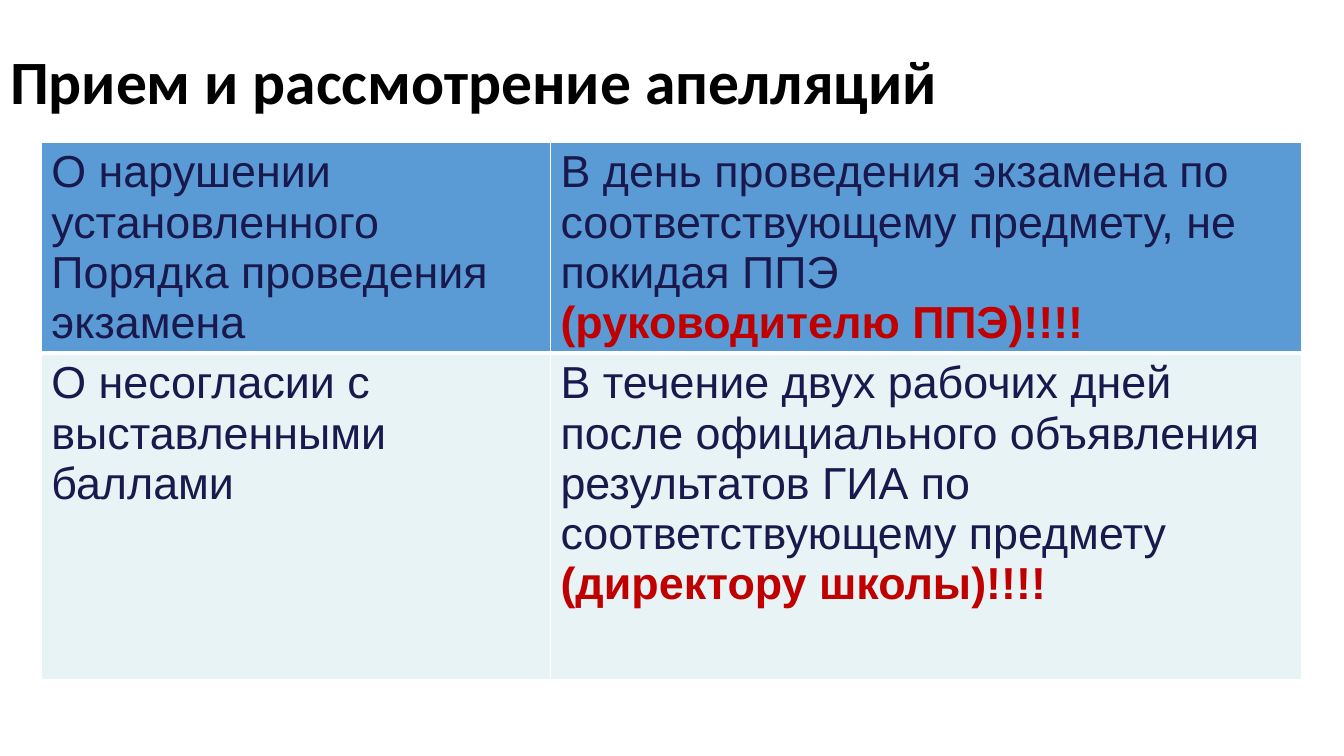
from pptx import Presentation
from pptx.dml.color import RGBColor
from pptx.enum.text import MSO_ANCHOR, PP_ALIGN
from pptx.oxml import parse_xml
from pptx.oxml.ns import nsdecls
from pptx.util import Inches, Pt

BLACK = RGBColor(0x00, 0x00, 0x00)
WHITE = RGBColor(0xFF, 0xFF, 0xFF)
NAVY = RGBColor(0x19, 0x19, 0x4D)
RED = RGBColor(0xC0, 0x00, 0x00)
BLUE = RGBColor(0x5B, 0x9B, 0xD5)
PALE = RGBColor(0xE7, 0xF3, 0xF4)

WIDTH, HEIGHT = Inches(13.33), Inches(7.5)
COLUMN_SHARES = (0.404, 0.596)
ROW_HEIGHTS = (1.76, 3.24)
ROW_FILLS = (BLUE, PALE)
THIN, THICK = 1, 3

# Each cell holds its statement and, where there is one, the addressee.
APPEALS = (
    (("О нарушении  установленного Порядка проведения экзамена",),
     ("В день проведения экзамена по соответствующему предмету, не покидая ППЭ",
      "(руководителю ППЭ)!!!!")),
    (("О несогласии с выставленными баллами",),
     ("В течение двух рабочих дней после официального объявления результатов "
      "ГИА по соответствующему предмету",
      "(директору школы)!!!!")),
)


def write(paragraph, text, size=32, font="Arial", color=NAVY, bold=False,
          line_spacing=None):
    paragraph.alignment = PP_ALIGN.LEFT
    paragraph.line_spacing = line_spacing
    run = paragraph.add_run()
    run.text = text
    run.font.size = Pt(size)
    run.font.name = font
    run.font.bold = bold
    run.font.color.rgb = color


def set_borders(cell, **widths):
    """Draw white borders; keys are lnL, lnR, lnT, lnB in schema order."""
    properties = cell._tc.get_or_add_tcPr()
    for position, (side, width) in enumerate(widths.items()):
        properties.insert(position, parse_xml(
            f'<a:{side} {nsdecls("a")} w="{Pt(width)}"><a:solidFill>'
            f'<a:srgbClr val="{WHITE}"/></a:solidFill></a:{side}>'))


def place_title(slide, left, top, width, height):
    title = slide.shapes.title
    title.left, title.top, title.width, title.height = left, top, width, height
    title.text_frame.word_wrap = True
    title.text_frame.vertical_anchor = MSO_ANCHOR.MIDDLE
    write(title.text_frame.paragraphs[0], "Прием и рассмотрение апелляций",
          size=44, font="Calibri", color=BLACK, bold=True, line_spacing=0.9)


def fill_cell(cell, texts, fill):
    cell.fill.solid()
    cell.fill.fore_color.rgb = fill
    frame = cell.text_frame
    write(frame.paragraphs[0], texts[0])
    for addressee in texts[1:]:
        write(frame.add_paragraph(), addressee, color=RED, bold=True)


def place_appeals(slide, left, top, width, height):
    table = slide.shapes.add_table(len(APPEALS), len(COLUMN_SHARES),
                                   left, top, width, height).table
    for column, share in zip(table.columns, COLUMN_SHARES):
        column.width = int(width * share)
    for index, (row, texts) in enumerate(zip(table.rows, APPEALS)):
        row.height = Inches(ROW_HEIGHTS[index])
        above, below = (THIN, THICK) if index == 0 else (THICK, THIN)
        for cell, cell_texts in zip(row.cells, texts):
            fill_cell(cell, cell_texts, ROW_FILLS[index])
            set_borders(cell, lnL=THIN, lnR=THIN, lnT=above, lnB=below)


def main():
    deck = Presentation()
    deck.slide_width, deck.slide_height = WIDTH, HEIGHT
    slide = deck.slides.add_slide(deck.slide_layouts[5])
    place_title(slide, 0, Inches(0.13), int(WIDTH * 0.76), Inches(1.42))
    place_appeals(slide, Inches(0.41), Inches(1.41), Inches(12.5),
                  Inches(sum(ROW_HEIGHTS)))
    deck.save("out.pptx")


if __name__ == "__main__":
    main()
